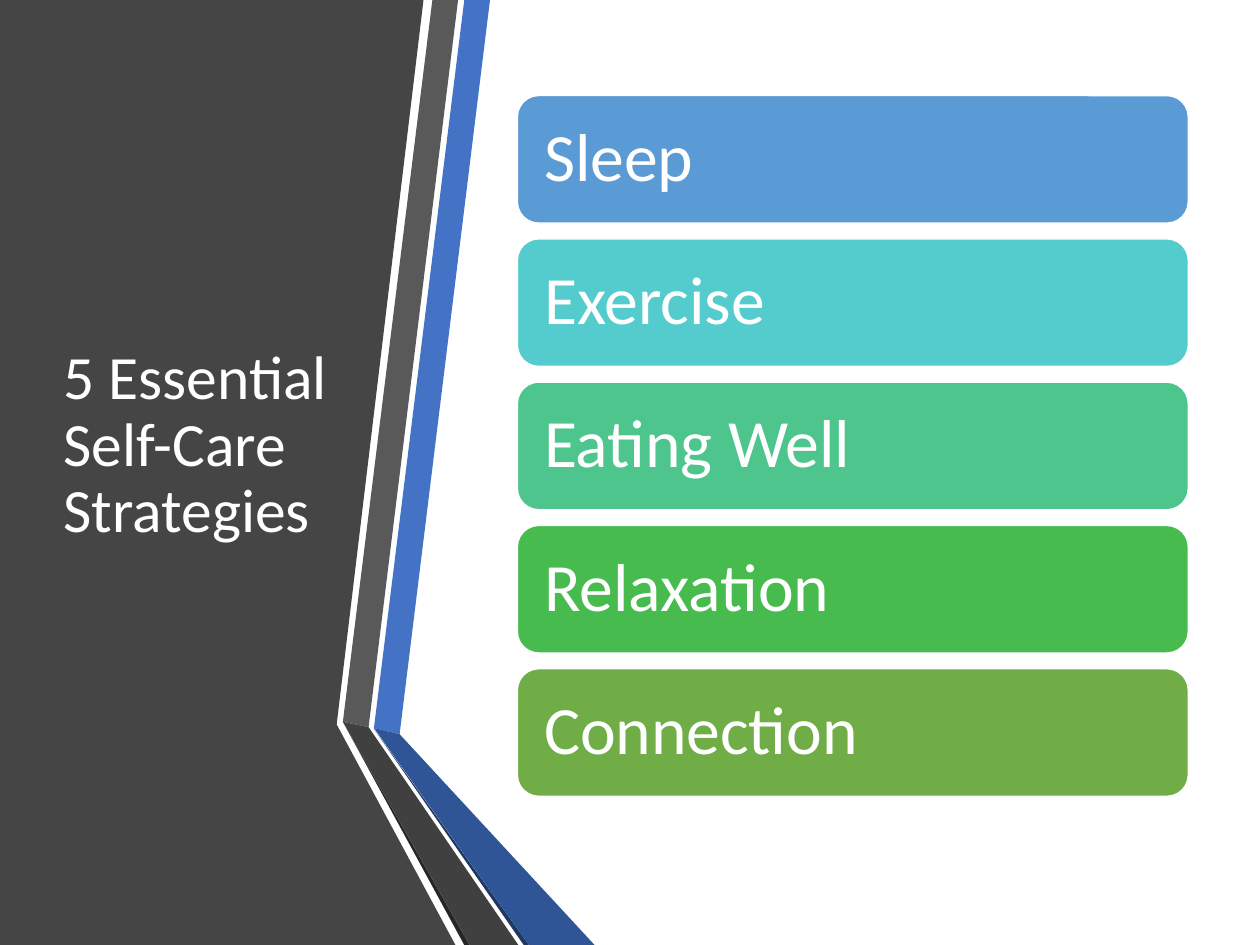
from pptx import Presentation
from pptx.dml.color import RGBColor
from pptx.enum.shapes import MSO_SHAPE
from pptx.enum.text import MSO_ANCHOR, PP_ALIGN
from pptx.util import Inches, Pt

WIDE, HIGH = 14.22, 10.67
FONT = "Calibri"
COLORS = {
    "white": "FFFFFF",
    "panel": "454545",
    "blue": "4472C4",
    "navy": "203864",
    "deep": "2F5597",
    "gray": "595959",
    "black": "262626",
    "dark": "404040",
    "sky": "5B9BD5",
    "aqua": "54CCCD",
    "mint": "4DC58D",
    "green": "48BB4F",
    "olive": "70AD47",
}
BANDS = [
    ("panel", [(0, 0), (4.78, 0), (3.8, 8.18), (5.14, HIGH), (0, HIGH)]),
    ("blue", [(4.22, 8.22), (4.51, 8.29), (5.53, 0), (5.24, 0)]),
    ("gray", [(5.17, 0), (4.88, 0), (3.87, 8.15), (4.16, 8.21)]),
    ("black", [(3.87, 8.15), (5.24, HIGH), (5.3, HIGH)]),
    ("navy", [(4.22, 8.23), (5.91, HIGH), (5.97, HIGH)]),
    ("deep", [(4.22, 8.22), (5.97, HIGH), (6.71, HIGH), (4.51, 8.29)]),
    ("dark", [(3.87, 8.15), (5.3, HIGH), (5.85, HIGH), (4.16, 8.21)]),
]
ITEMS = [
    ("Sleep", "sky"),
    ("Exercise", "aqua"),
    ("Eating Well", "mint"),
    ("Relaxation", "green"),
    ("Connection", "olive"),
]


def color(name):
    return RGBColor.from_string(COLORS[name])


def paint(shape, fill, line=None):
    shape.shadow.inherit = False
    shape.fill.solid()
    shape.fill.fore_color.rgb = color(fill)
    if line:
        shape.line.color.rgb = color(line)
        shape.line.width = Pt(1)
    else:
        shape.line.fill.background()


def write(shape, text, size=50, tint="white", inset=0.1):
    frame = shape.text_frame
    frame.word_wrap = True
    frame.vertical_anchor = MSO_ANCHOR.MIDDLE
    frame.margin_left = frame.margin_right = Inches(inset)
    par = frame.paragraphs[0]
    par.alignment = PP_ALIGN.LEFT
    par.line_spacing = 0.9
    run = par.add_run()
    run.text = text
    run.font.name = FONT
    run.font.size = Pt(size)
    run.font.color.rgb = color(tint)


def draw_bands(slide, left, top):
    for fill, points in BANDS:
        spots = [(Inches(left + x), Inches(top + y)) for x, y in points]
        path = slide.shapes.build_freeform(*spots[0])
        path.add_line_segments(spots[1:], close=True)
        paint(path.convert_to_shape(), fill)


def draw_title(slide, left, top, width, height):
    box = slide.shapes.add_textbox(*map(Inches, (left, top, width, height)))
    write(box, "5 Essential Self-Care Strategies")


def draw_list(slide, left, top, width, height, gap=0.18):
    tall = (height - gap * (len(ITEMS) - 1)) / len(ITEMS)
    for i, (text, fill) in enumerate(ITEMS):
        place = (left, top + i * (tall + gap), width, tall)
        card = slide.shapes.add_shape(
            MSO_SHAPE.ROUNDED_RECTANGLE, *map(Inches, place))
        paint(card, fill, line="white")
        write(card, text, size=55, inset=0.23)


def main():
    deck = Presentation()
    deck.slide_width, deck.slide_height = Inches(WIDE), Inches(HIGH)
    slide = deck.slides.add_slide(deck.slide_layouts[6])
    draw_bands(slide, 0, 0)
    draw_title(slide, 0.62, 1.07, 3.24, 7.94)
    draw_list(slide, 5.84, 1.08, 7.57, 7.91)
    deck.save("out.pptx")


if __name__ == "__main__":
    main()
